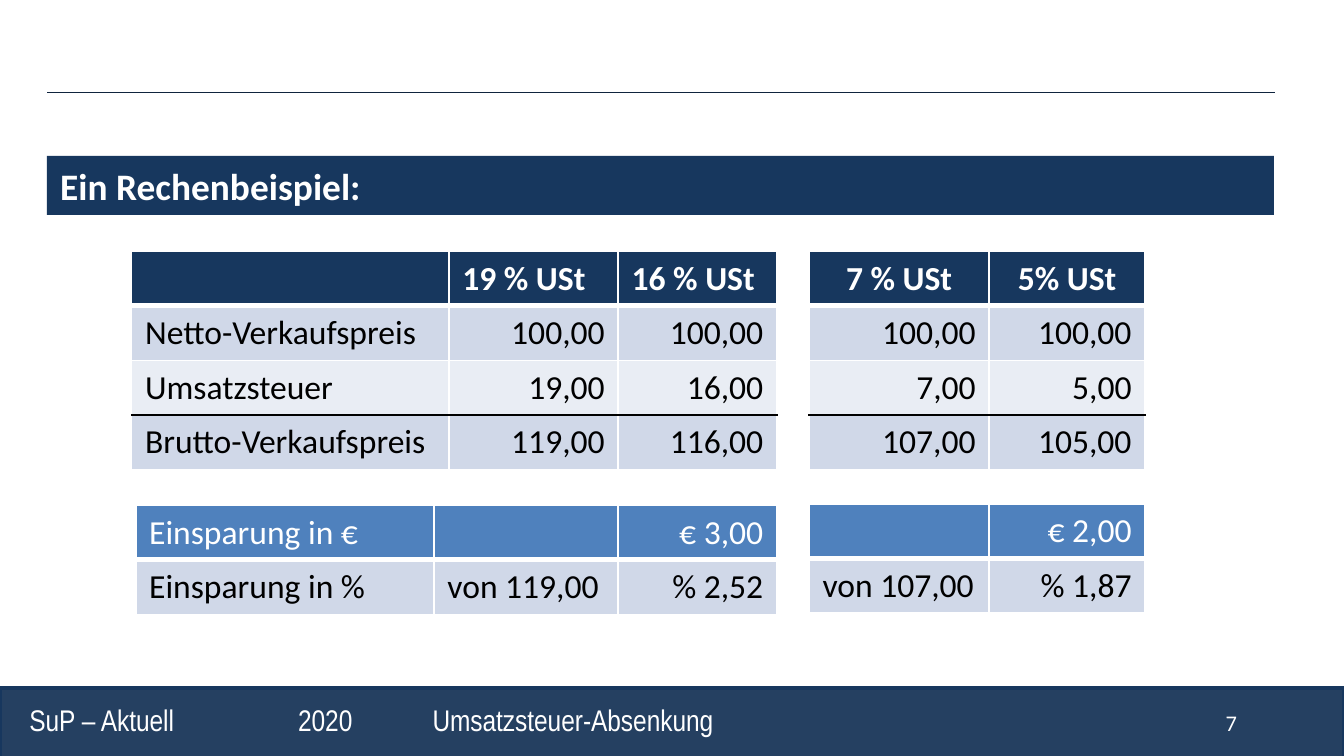
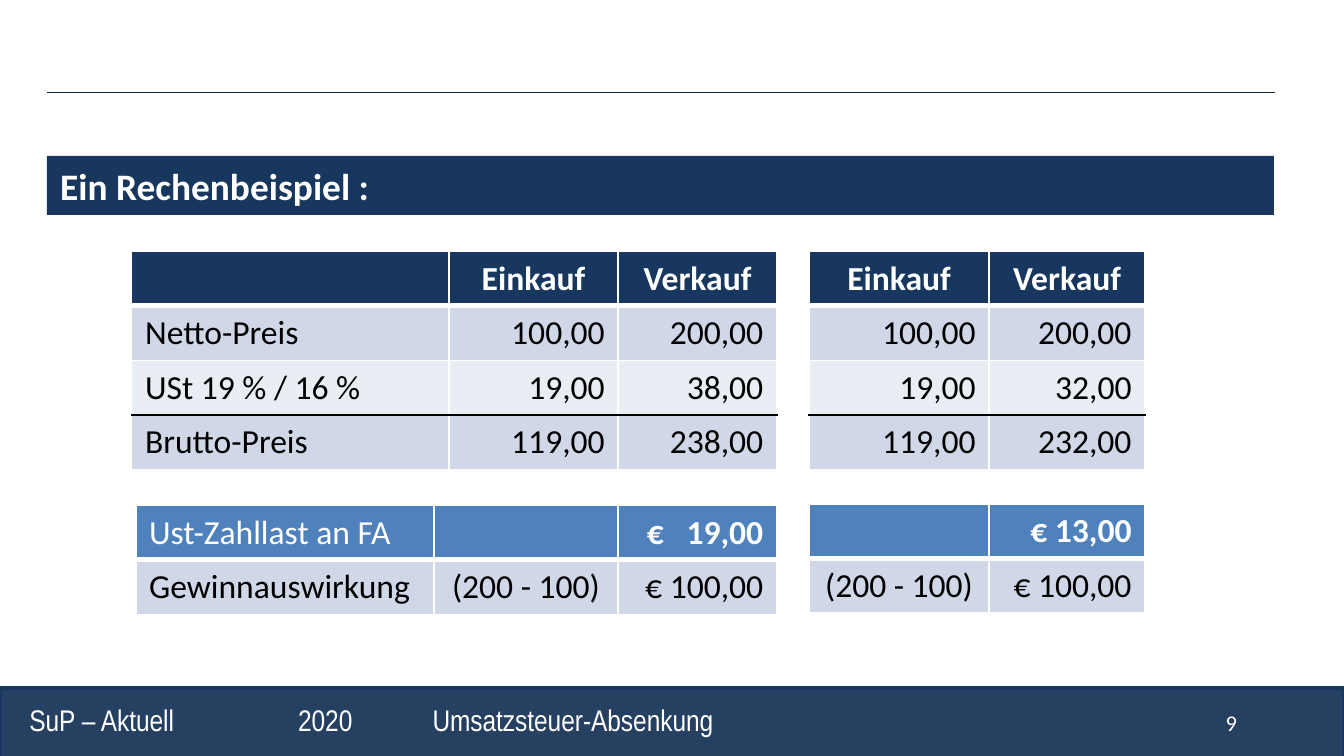
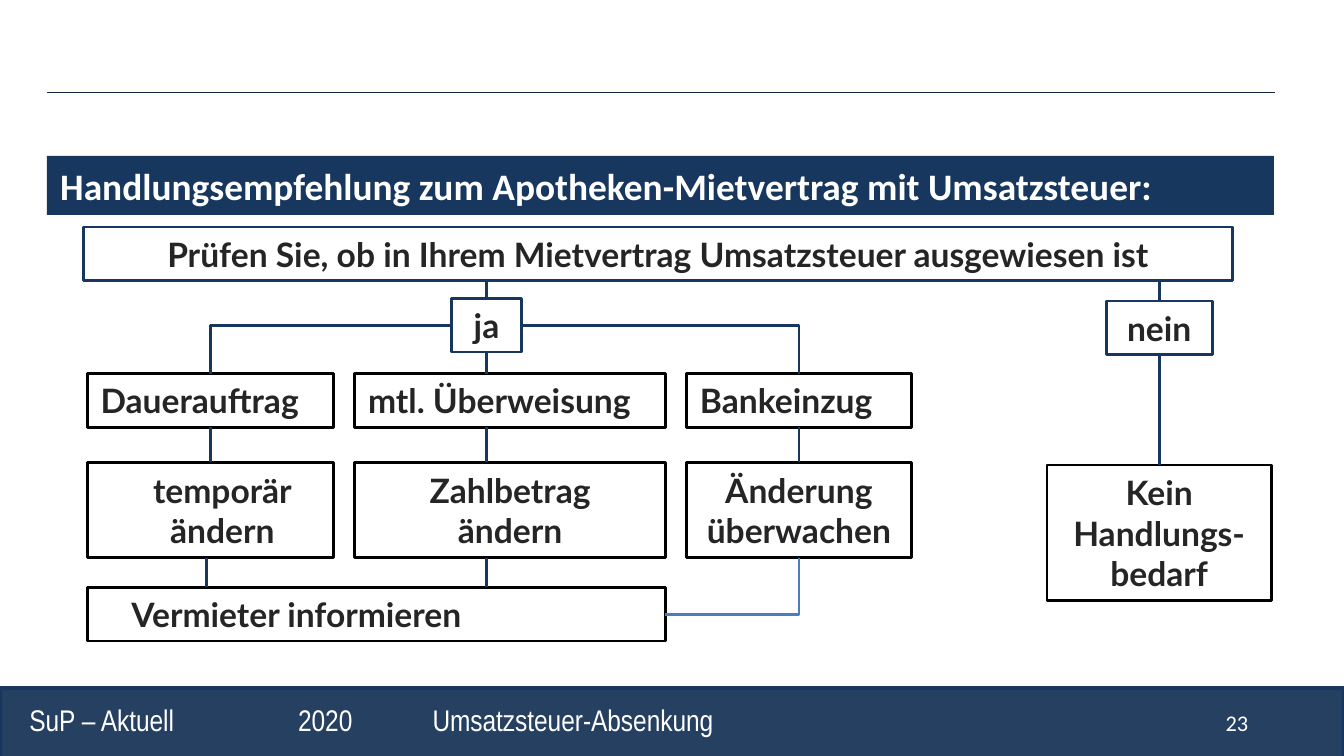
import pptx
import pptx.dml.color
import pptx.enum.shapes
import pptx.enum.text
import pptx.oxml.ns
import pptx.util
from lxml import etree

UNIT = 0.1  # inches per grid column and row
COLUMNS, ROWS = 100, 56.25
COLORS = {
    "white": "FFFFFF", "black": "000000", "text": "252525",
    "navy": "17375E", "band": "254061", "rule": "0F243E",
    "blue": "4F81BD", "link": "4B7EBC", "row": "D0D8E8", "row_light": "E9EDF4",
}
ALIGN = {
    "l": pptx.enum.text.PP_ALIGN.LEFT,
    "c": pptx.enum.text.PP_ALIGN.CENTER,
    "r": pptx.enum.text.PP_ALIGN.RIGHT,
}
RECTANGLE = pptx.enum.shapes.MSO_SHAPE.RECTANGLE
TOP, LEFT, BOTTOM, RIGHT = range(4)
TABLE_ROW = 4.06
PRICE_TOP = 18.7


def grid(*counts):
    return [pptx.util.Inches(count * UNIT) for count in counts]


def color(name):
    return pptx.dml.color.RGBColor.from_string(COLORS[name])


def tag(name):
    return pptx.oxml.ns.qn(name)


# Text
def style(para, size, font, tint, bold=False, align="l"):
    para.alignment = ALIGN[align]
    para.font.size = pptx.util.Pt(size)
    para.font.name = font
    para.font.bold = bold
    para.font.color.rgb = color(tint)


def write(frame, lines, size, font, tint, bold=False, align="l", indent=0, tabs=()):
    frame.word_wrap = True
    frame.text = lines
    for para in frame.paragraphs:
        properties = para._p.get_or_add_pPr()
        if indent:
            properties.set("marL", str(grid(indent)[0]))
        if tabs:
            stops = etree.SubElement(properties, tag("a:tabLst"))
            for stop in grid(*tabs):
                etree.SubElement(stops, tag("a:tab"), pos=str(stop), algn="l")
        style(para, size, font, tint, bold, align)


def add_label(page, area, text, size, font, **options):
    box = page.shapes.add_textbox(*grid(*area))
    write(box.text_frame, text, size, font, "white", **options)


# Shapes and lines
def add_box(page, area, fill=None, outline=None, width=1.5):
    box = page.shapes.add_shape(RECTANGLE, *grid(*area))
    box.shadow.inherit = False
    if fill:
        box.fill.solid()
        box.fill.fore_color.rgb = color(fill)
    else:
        box.fill.background()
    if outline:
        box.line.color.rgb = color(outline)
        box.line.width = pptx.util.Pt(width)
    else:
        box.line.fill.background()
    return box


def add_step(page, area, text, outline="black", align="c", indent=0):
    box = add_box(page, area, outline=outline)
    write(box.text_frame, text, 18, "Lato", "text", True, align, indent)
    return box


def is_joint(end):
    return not isinstance(end[0], (int, float))


def locate(end):
    """Turn a grid point or a (box, side) joint into slide coordinates."""
    if not is_joint(end):
        return grid(*end)
    box, side = end
    across = {LEFT: 0, RIGHT: box.width}.get(side, box.width // 2)
    down = {TOP: 0, BOTTOM: box.height}.get(side, box.height // 2)
    return box.left + across, box.top + down


def add_link(page, start, end, tint="navy", width=1.5, bent=False):
    kinds = pptx.enum.shapes.MSO_CONNECTOR
    kind = kinds.ELBOW if bent else kinds.STRAIGHT
    line = page.shapes.add_connector(kind, *locate(start), *locate(end))
    if is_joint(start):
        line.begin_connect(*start)
    if is_joint(end):
        line.end_connect(*end)
    line.line.color.rgb = color(tint)
    line.line.width = pptx.util.Pt(width)
    properties = line._element.spPr
    if bent:
        properties.find(tag("a:prstGeom")).set("prst", "bentConnector2")
    etree.SubElement(properties, tag("a:effectLst"))


# Tables
def set_border(cell, side, tint="white", width=1):
    edge = etree.SubElement(cell._tc.get_or_add_tcPr(), tag("a:ln" + side),
                            w=str(pptx.util.Pt(width)))
    fill = etree.SubElement(edge, tag("a:solidFill"))
    etree.SubElement(fill, tag("a:srgbClr"), val=COLORS[tint])


def add_table(page, left, top, widths, rows, codes, head):
    """codes hold one letter per cell: l, c or r; a capital means bold."""
    frame = page.shapes.add_table(len(rows), len(widths), *grid(
        left, top, sum(widths), TABLE_ROW * len(rows)))
    table = frame.table
    table.first_row = table.horz_banding = False
    for column, width in zip(table.columns, grid(*widths)):
        column.width = width
    total_row = 3
    for r, (texts, code) in enumerate(zip(rows, codes)):
        table.rows[r].height = grid(TABLE_ROW)[0]
        fill = head if r == 0 else ("row", "row_light")[(r - 1) % 2]
        edges = {"L": {}, "R": {}, "T": {}, "B": {}}
        if r <= 1:
            edges["TB"[r == 0]] = {"width": 3}
        if len(rows) > total_row and r in (total_row - 1, total_row):
            edges["TB"[r < total_row]] = {"tint": "black"}
        for c, (text, letter) in enumerate(zip(texts, code)):
            cell = table.cell(r, c)
            for side, look in edges.items():
                set_border(cell, side, **look)
            cell.fill.solid()
            cell.fill.fore_color.rgb = color(fill)
            cell.text = text
            style(cell.text_frame.paragraphs[0], 18, "Calibri",
                  "black" if r else "white", letter.isupper(), letter.lower())
    return table


def widen_gap(cell, extra):
    """Stretch the blank between currency sign and amount."""
    para = cell.text_frame.paragraphs[0]
    sign, amount = para.text.split(" ")
    para.runs[0].text = sign
    blank, rest = para.add_run(), para.add_run()
    blank.text, rest.text = " ", amount
    blank._r.get_or_add_rPr().set("spc", str(extra * 100))


# Pages
def add_page(deck, number, title):
    page = deck.slides.add_slide(deck.slide_layouts[6])
    add_link(page, (3.5, 6.9), (94.9, 6.9), "rule", 0.75)
    add_box(page, (0, 51.2, COLUMNS, 5.2), "band", "navy", 2)
    add_label(page, (90.2, 52.3, 7.1, 3), number, 12, "Calibri")
    add_label(page, (1.2, 51.7, 88, 3.7),
              "SuP – Aktuell\t2020\tUmsatzsteuer-Absenkung",
              16, "Arial Narrow", tabs=(20, 30))
    bar = add_box(page, (3.5, 11.6, 91.3, 4.4), "navy")
    write(bar.text_frame, title, 20, "Calibri", "white", True)
    return page


def add_calculation(page, prices, price_codes, results, result_codes):
    """Each row is split into a left table and a table for the last two columns."""
    def split(rows):
        return [row[:3] for row in rows], [row[3:] for row in rows]

    tables = []
    for rows, codes, head, places in (
        (prices, price_codes, "navy",
         ((9.8, PRICE_TOP, (23.6, 12.6, 11.8)), (60.2, PRICE_TOP, (13.4, 11.6)))),
        (results, result_codes, "blue",
         ((10.1, 37.6, (22.2, 13.7, 11.8)), (60.2, 37.5, (13.4, 11.6)))),
    ):
        for place, part, letters in zip(places, split(rows), split(codes)):
            tables.append(add_table(page, *place, part, letters, head))
    return tables


def add_decision_tree(page):
    add_step(page, (6.2, 16.9, 85.5, 4),
             "Prüfen Sie, ob in Ihrem Mietvertrag Umsatzsteuer ausgewiesen ist", "navy")
    yes = add_step(page, (33.6, 22.2, 5.2, 4), "ja", "navy")
    no = add_step(page, (82.3, 22.4, 7.9, 4), "nein", "navy")
    nothing = add_step(page, (77.9, 34.6, 16.7, 10.1), "Kein Handlungs-bedarf")
    inform = add_step(page, (6.5, 43.7, 43, 4), "Vermieter informieren",
                      align="l", indent=2.3)

    # Payment methods with their actions
    methods, actions = [], []
    for left, width, method, action, indent in (
        (6.5, 18.3, "Dauerauftrag", "temporär\nändern", 1.8),
        (26.4, 23.1, "mtl. Überweisung", "Zahlbetrag\nändern", 0),
        (51.1, 16.7, "Bankeinzug", "Änderung\nüberwachen", 0),
    ):
        methods.append(add_step(page, (left, 27.8, width, 4), method, align="l"))
        actions.append(add_step(page, (left, 34.4, width, 7.1), action, indent=indent))

    # Branches
    yes_axis, no_axis = 36.2, 86.25
    add_link(page, (yes_axis, 20.9), (yes, TOP))
    add_link(page, (no_axis, 20.9), (no, TOP))
    add_link(page, (no, BOTTOM), (nothing, TOP))
    add_link(page, (yes, BOTTOM), (yes_axis, 27.8))
    add_link(page, (yes_axis, 31.8), (yes_axis, 34.4))
    for side, branch in ((LEFT, 0), (RIGHT, 2)):
        add_link(page, (yes, side), (methods[branch], TOP), bent=True)
        add_link(page, (methods[branch], BOTTOM), (actions[branch], TOP))
    for axis in (15.35, yes_axis):
        add_link(page, (axis, 41.5), (axis, 43.7))
    add_link(page, (inform, RIGHT), (actions[2], BOTTOM), "link", bent=True)


def main():
    deck = pptx.Presentation()
    deck.slide_width, deck.slide_height = grid(COLUMNS, ROWS)

    # Price example
    page = add_page(deck, "7", "Ein Rechenbeispiel:")
    add_calculation(
        page,
        [("", "19 % USt", "16 % USt", "7 % USt", "5% USt"),
         ("Netto-Verkaufspreis", "100,00", "100,00", "100,00", "100,00"),
         ("Umsatzsteuer", "19,00", "16,00", "7,00", "5,00"),
         ("Brutto-Verkaufspreis", "119,00", "116,00", "107,00", "105,00")],
        ["LLLCC"] + ["lrrrr"] * 3,
        [("Einsparung in €", "", "€ 3,00", "", "€ 2,00"),
         ("Einsparung in %", "von 119,00", "% 2,52", "von 107,00", "% 1,87")],
        ["llrlr", "llrlr"])

    # Purchase and sale example
    page = add_page(deck, "9", "Ein Rechenbeispiel :")
    tables = add_calculation(
        page,
        [("", "Einkauf", "Verkauf", "Einkauf", "Verkauf"),
         ("Netto-Preis", "100,00", "200,00", "100,00", "200,00"),
         ("USt 19 % / 16 %", "19,00", "38,00", "19,00", "32,00"),
         ("Brutto-Preis", "119,00", "238,00", "119,00", "232,00")],
        ["LCCCC"] + ["lrrrr"] * 3,
        [("Ust-Zahllast an FA", "", "€ 19,00", "", "€ 13,00"),
         ("Gewinnauswirkung", "(200 - 100)", "€ 100,00", "(200 - 100)", "€ 100,00")],
        ["llRlR", "lcrcr"])
    widen_gap(tables[2].cell(0, 2), 8)

    # Lease decision tree
    page = add_page(deck, "23",
                    "Handlungsempfehlung zum Apotheken-Mietvertrag mit Umsatzsteuer:")
    add_decision_tree(page)

    deck.save("out.pptx")


if __name__ == "__main__":
    main()
